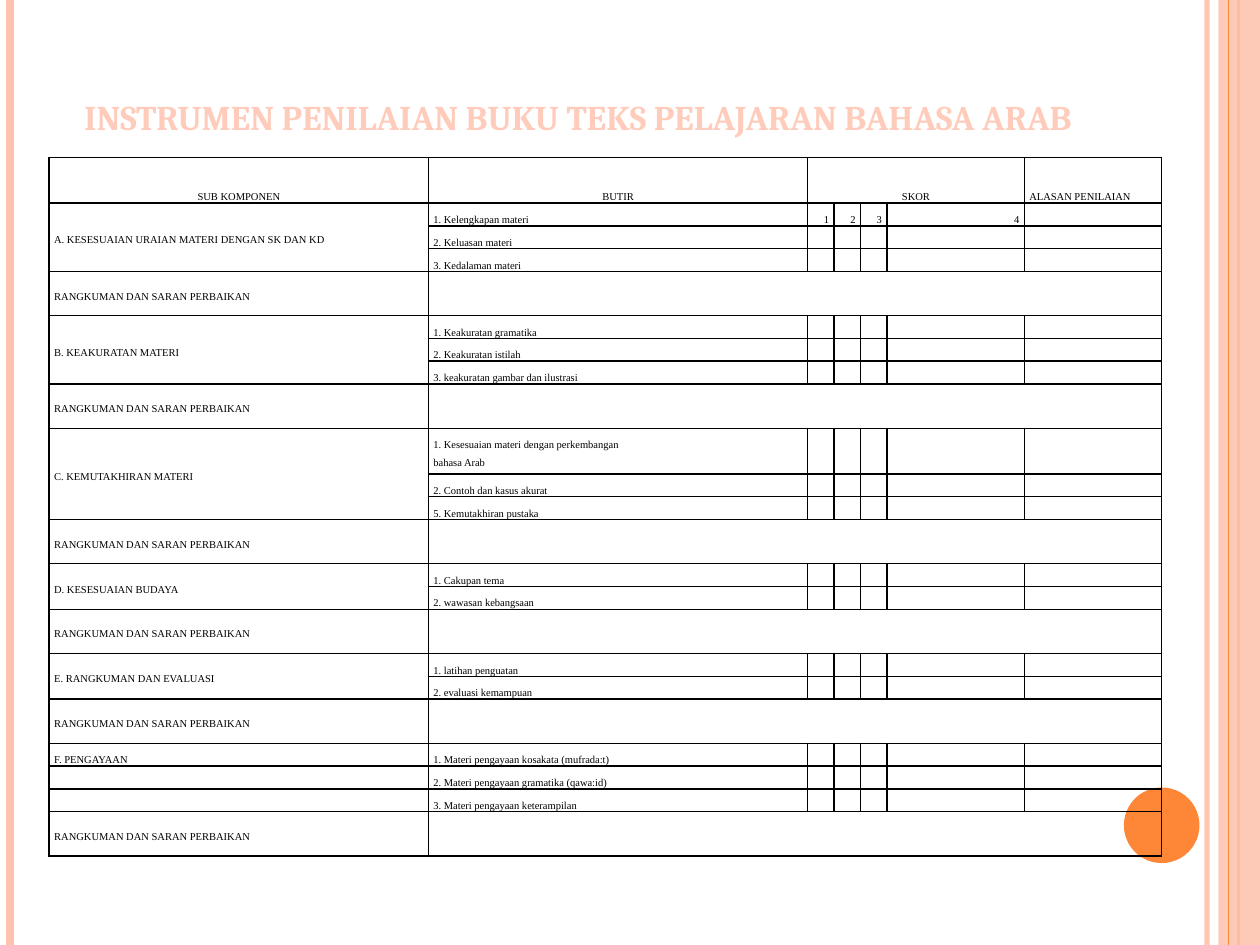
from typing import NamedTuple

from lxml.etree import SubElement
from pptx import Presentation
from pptx.dml.color import RGBColor
from pptx.enum.shapes import MSO_CONNECTOR, MSO_SHAPE
from pptx.enum.text import MSO_ANCHOR as Anchor, PP_ALIGN as Align
from pptx.oxml import parse_xml
from pptx.oxml.ns import nsdecls, qn
from pptx.util import Inches, Pt

COLORS = {"peach": "FEC3AE", "orange": "FE8637", "title": "FFCCBB", "ink": "000000"}
SLIDE_WIDTH, SLIDE_HEIGHT = 10, 7.5
COLUMN_WIDTHS = [3.01, 3.01, 0.21, 0.21, 0.21, 1.09, 1.09]
TABLE_HEIGHT = 5.55
ITEM_HEIGHT, DOUBLE_HEIGHT, SUMMARY_HEIGHT = 0.18, 0.36, 0.35
SUMMARY = "RANGKUMAN DAN SARAN PERBAIKAN"
SCORE_COLUMNS = range(2, 6)
LAST_COLUMN = len(COLUMN_WIDTHS) - 1


class Stripe(NamedTuple):
    x: float
    width: float
    color: str
    opacity: int = 100


class SubComponent(NamedTuple):
    name: str
    items: list[str]
    merged: bool = True


LINES_BEHIND_BAND = [
    Stripe(9.58, 3, "peach", 93),
    Stripe(0.08, 4.5, "peach"),
    Stripe(9.83, 1.5, "orange"),
]
LINE_ON_BAND = Stripe(9.75, 0.75, "orange")

SUB_COMPONENTS = [
    SubComponent("A. KESESUAIAN URAIAN MATERI DENGAN SK DAN KD",
                 ["1. Kelengkapan materi", "2. Keluasan materi", "3. Kedalaman materi"]),
    SubComponent("B. KEAKURATAN MATERI",
                 ["1. Keakuratan gramatika", "2. Keakuratan istilah",
                  "3. keakuratan gambar dan ilustrasi"]),
    SubComponent("C. KEMUTAKHIRAN MATERI",
                 ["1. Kesesuaian materi dengan perkembangan \nbahasa Arab",
                  "2. Contoh dan kasus akurat", "5. Kemutakhiran pustaka"]),
    SubComponent("D. KESESUAIAN BUDAYA", ["1. Cakupan tema", "2. wawasan kebangsaan"]),
    SubComponent("E. RANGKUMAN DAN EVALUASI",
                 ["1. latihan penguatan", "2. evaluasi kemampuan"]),
    SubComponent("F. PENGAYAAN",
                 ["1. Materi pengayaan kosakata (mufrada:t)",
                  "2. Materi pengayaan gramatika (qawa:id)",
                  "3. Materi pengayaan keterampilan"], merged=False),
]


def rgb(name: str) -> RGBColor:
    return RGBColor.from_string(COLORS[name])


def set_opacity(shape, percent: int) -> None:
    color = next(shape.element.spPr.iter(qn("a:srgbClr")))
    SubElement(color, qn("a:alpha"), val=str(percent * 1000))


def draw_stripe(slide, stripe: Stripe) -> None:
    x = Inches(stripe.x)
    line = slide.shapes.add_connector(MSO_CONNECTOR.STRAIGHT, x, 0, x, Inches(SLIDE_HEIGHT))
    line.line.color.rgb = rgb(stripe.color)
    line.line.width = Pt(stripe.width)
    SubElement(line.element.spPr, qn("a:effectLst"))
    if stripe.opacity < 100:
        set_opacity(line, stripe.opacity)


def draw_solid(slide, kind: MSO_SHAPE, x: float, y: float, width: float, height: float,
               color: str):
    solid = slide.shapes.add_shape(kind, Inches(x), Inches(y), Inches(width), Inches(height))
    solid.shadow.inherit = False
    solid.fill.solid()
    solid.fill.fore_color.rgb = rgb(color)
    solid.line.fill.background()
    return solid


def draw_side_decoration(slide) -> None:
    for stripe in LINES_BEHIND_BAND:
        draw_stripe(slide, stripe)
    band = draw_solid(slide, MSO_SHAPE.RECTANGLE, 9.67, 0, 0.33, SLIDE_HEIGHT, "peach")
    set_opacity(band, 87)
    draw_stripe(slide, LINE_ON_BAND)
    draw_solid(slide, MSO_SHAPE.OVAL, 8.92, 6.25, 0.6, 0.6, "orange")


def write_title(slide) -> None:
    title = slide.shapes.title
    title.left, title.top = Inches(0.5), Inches(0.3)
    title.width, title.height = Inches(8.17), Inches(1.25)
    frame = title.text_frame
    frame.text = "INSTRUMEN PENILAIAN BUKU TEKS PELAJARAN BAHASA ARAB"
    frame.word_wrap = True
    frame.vertical_anchor = Anchor.BOTTOM
    frame.margin_bottom = Inches(0.46)
    heading = frame.paragraphs[0]
    heading.alignment = Align.CENTER
    heading.font.name, heading.font.size, heading.font.bold = "Cambria", Pt(19.8), True
    heading.font.color.rgb = rgb("title")


def format_cell(cell) -> None:
    """Give a cell its grid lines, insets and small type, with no fill."""
    cell.margin_left = cell.margin_right = Inches(0.04)
    cell.margin_top = cell.margin_bottom = 0
    cell.vertical_anchor = Anchor.BOTTOM
    cell.fill.background()
    for index, side in enumerate(("lnL", "lnR", "lnT", "lnB")):
        border = parse_xml(
            f'<a:{side} {nsdecls("a")} w="{Pt(1)}"><a:solidFill>'
            f'<a:srgbClr val="{COLORS["ink"]}"/></a:solidFill></a:{side}>')
        cell._tc.tcPr.insert(index, border)
    paragraph = cell.text_frame.paragraphs[0]
    paragraph.line_spacing = 1.5
    font = paragraph.font
    font.name, font.size, font.bold = "Times New Roman", Pt(6), False
    font.color.rgb = rgb("ink")
    # An empty cell takes its line height from the end-of-paragraph size.
    SubElement(paragraph._p, qn("a:endParaRPr"), sz="600")


def write(cell, text: str, anchor: Anchor = Anchor.BOTTOM, align: Align = Align.LEFT) -> None:
    paragraph = cell.text_frame.paragraphs[0]
    paragraph.text = text
    paragraph.alignment = align
    cell.vertical_anchor = anchor


def row_heights() -> list[float]:
    heights = [DOUBLE_HEIGHT]
    for component in SUB_COMPONENTS:
        heights += [DOUBLE_HEIGHT if "\n" in item else ITEM_HEIGHT for item in component.items]
        heights.append(SUMMARY_HEIGHT)
    stretch = TABLE_HEIGHT / sum(heights)
    return [height * stretch for height in heights]


def write_header(table) -> None:
    table.cell(0, SCORE_COLUMNS[0]).merge(table.cell(0, SCORE_COLUMNS[-1]))
    for column, heading in enumerate(["SUB KOMPONEN", "BUTIR", "SKOR"]):
        write(table.cell(0, column), heading, align=Align.CENTER)
    write(table.cell(0, LAST_COLUMN), "ALASAN PENILAIAN")
    for score, column in enumerate(SCORE_COLUMNS, start=1):
        write(table.cell(1, column), str(score), align=Align.RIGHT)


def write_component(table, first: int, component: SubComponent) -> int:
    """Fill the item rows and the summary row; return the row that follows."""
    summary = first + len(component.items)
    if component.merged:
        table.cell(first, 0).merge(table.cell(summary - 1, 0))
    write(table.cell(first, 0), component.name,
          Anchor.MIDDLE if component.merged else Anchor.BOTTOM)
    for row, item in enumerate(component.items, start=first):
        write(table.cell(row, 1), item, Anchor.MIDDLE if "\n" in item else Anchor.BOTTOM)
    table.cell(summary, 1).merge(table.cell(summary, LAST_COLUMN))
    write(table.cell(summary, 0), SUMMARY, Anchor.MIDDLE)
    return summary + 1


def draw_instrument(slide) -> None:
    heights = row_heights()
    table = slide.shapes.add_table(
        len(heights), len(COLUMN_WIDTHS), Inches(0.39), Inches(1.25),
        Inches(sum(COLUMN_WIDTHS)), Inches(TABLE_HEIGHT)).table
    table.first_row = table.horz_banding = False
    for column, width in zip(table.columns, COLUMN_WIDTHS):
        column.width = Inches(width)
    for row, height in zip(table.rows, heights):
        row.height = Inches(height)
    for cell in table.iter_cells():
        format_cell(cell)
    write_header(table)
    row = 1
    for component in SUB_COMPONENTS:
        row = write_component(table, row, component)


def main() -> None:
    deck = Presentation()
    deck.slide_width, deck.slide_height = Inches(SLIDE_WIDTH), Inches(SLIDE_HEIGHT)
    slide = deck.slides.add_slide(deck.slide_layouts[5])
    draw_side_decoration(slide)
    write_title(slide)
    draw_instrument(slide)
    deck.save("out.pptx")


if __name__ == "__main__":
    main()
